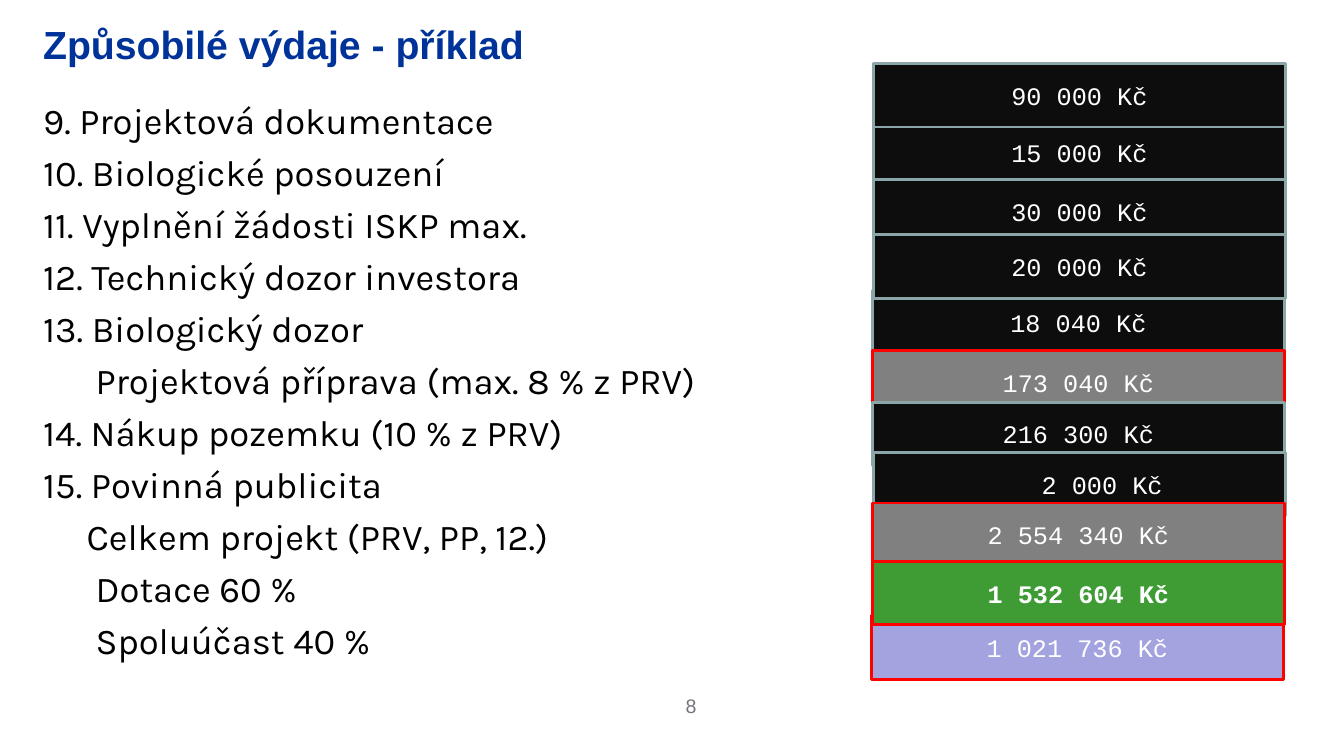
"""Builds the slide of eligible costs with a worked example."""
from pptx import Presentation
from pptx import util as u
from pptx.dml.color import RGBColor
from pptx.enum import shapes, text

PX = 9144
NAVY = RGBColor(0x00, 0x33, 0x99)
INK = RGBColor(0x00, 0x00, 0x00)
SLATE = RGBColor(0x73, 0x76, 0x7D)
WHITE = RGBColor(0xFF, 0xFF, 0xFF)
DARK = RGBColor(0x0D, 0x0D, 0x0D)
GREY = RGBColor(0x80, 0x80, 0x80)
GREEN = RGBColor(0x3F, 0x9C, 0x35)
LILAC = RGBColor(0xA3, 0xA3, 0xE0)
TEAL = RGBColor(0x8A, 0xA6, 0xA8)
RED = RGBColor(0xFF, 0x00, 0x00)

COSTS = [
    ("9. Projektová dokumentace", 0),
    ("10. Biologické posouzení", 0),
    ("11. Vyplnění žádosti ISKP max.", 0),
    ("12. Technický dozor investora", 0),
    ("13. Biologický dozor", 0),
    ("Projektová příprava (max. 8 % z PRV)", 52),
    ("14. Nákup pozemku (10 % z PRV)", 0),
    ("15. Povinná publicita", 0),
    ("Celkem projekt (PRV, PP, 12.)", 43),
    ("Dotace 60 %", 52),
    ("Spoluúčast 40 %", 52),
]

SUMS = [
    ("15 000 Kč", 866, 120, DARK, TEAL, 0),
    ("30 000 Kč", 866, 178, DARK, TEAL, 0),
    ("90 000 Kč", 866, 63, DARK, TEAL, 0),
    ("18 040 Kč", 865, 288, DARK, TEAL, 0),
    ("20 000 Kč", 866, 233, DARK, TEAL, 0),
    ("1 021 736 Kč", 864, 611, LILAC, RED, 0),
    ("173 040 Kč", 865, 348, GREY, RED, 0),
    ("216 300 Kč", 865, 399, DARK, TEAL, 0),
    ("2 000 Kč", 866, 449, DARK, TEAL, 45),
    ("2 554 340 Kč", 865, 499, GREY, RED, 0),
    ("1 532 604 Kč", 865, 557, GREEN, RED, 0),
]


class Deck:
    """Holds the style and the current slide."""

    def __init__(self):
        """Open a blank slide."""
        self.show = Presentation()
        self.show.slide_width = 1333 * PX
        self.show.slide_height = 750 * PX
        self.slide = self.show.slides.add_slide(self.show.slide_layouts[6])

    def label(self, para, words, face, size, tint, bold=False, left=0):
        """Fill one paragraph and format its runs."""
        para.text = words
        if left:
            para._p.get_or_add_pPr().set("marL", str(left * PX))
        for run in para.runs:
            run.font.name = face
            run.font.size = u.Pt(size)
            run.font.bold = bold
            run.font.color.rgb = tint

    def box(self, x, y, w, h, anchor=text.MSO_ANCHOR.TOP):
        """Add a wrapped text box and return its frame."""
        frame = self.slide.shapes.add_textbox(x * PX, y * PX, w * PX, h * PX).text_frame
        frame.word_wrap = True
        frame.vertical_anchor = anchor
        return frame

    def title(self, words):
        """Add the heading."""
        frame = self.box(33, 5, 1207, 77, text.MSO_ANCHOR.MIDDLE)
        self.label(frame.paragraphs[0], words, "Arial", 28, NAVY, True)

    def list(self, rows):
        """Add the list of costs."""
        frame = self.box(33, 86, 1182, 495)
        frame.margin_top = 11 * PX
        for i, (words, left) in enumerate(rows):
            para = frame.add_paragraph() if i else frame.paragraphs[0]
            self.label(para, words, "Karla", 26, INK, left=left)
            if i:
                para.space_before = u.Pt(6)

    def sum(self, words, x, y, fill, edge, left):
        """Add one amount in a framed bar."""
        bar = self.slide.shapes.add_shape(
            shapes.MSO_SHAPE.RECTANGLE, x * PX, y * PX, 409 * PX, 63 * PX)
        bar.shadow.inherit = False
        bar.fill.solid()
        bar.fill.fore_color.rgb = fill
        bar.line.color.rgb = edge
        bar.line.width = u.Pt(2)
        frame = bar.text_frame
        frame.vertical_anchor = text.MSO_ANCHOR.MIDDLE
        para = frame.paragraphs[0]
        self.label(para, words, "Courier New", 18, WHITE, fill == GREEN, left)
        para.alignment = text.PP_ALIGN.CENTER

    def page(self, words):
        """Add the page number."""
        para = self.box(530, 683, 311, 52).paragraphs[0]
        self.label(para, words, "Arial", 14, SLATE)
        para.alignment = text.PP_ALIGN.CENTER


def main():
    """Build and save the slide."""
    deck = Deck()
    deck.title("Způsobilé výdaje - příklad")
    deck.list(COSTS)
    deck.page("8")
    for row in SUMS:
        deck.sum(*row)
    deck.show.save("out.pptx")


if __name__ == "__main__":
    main()
